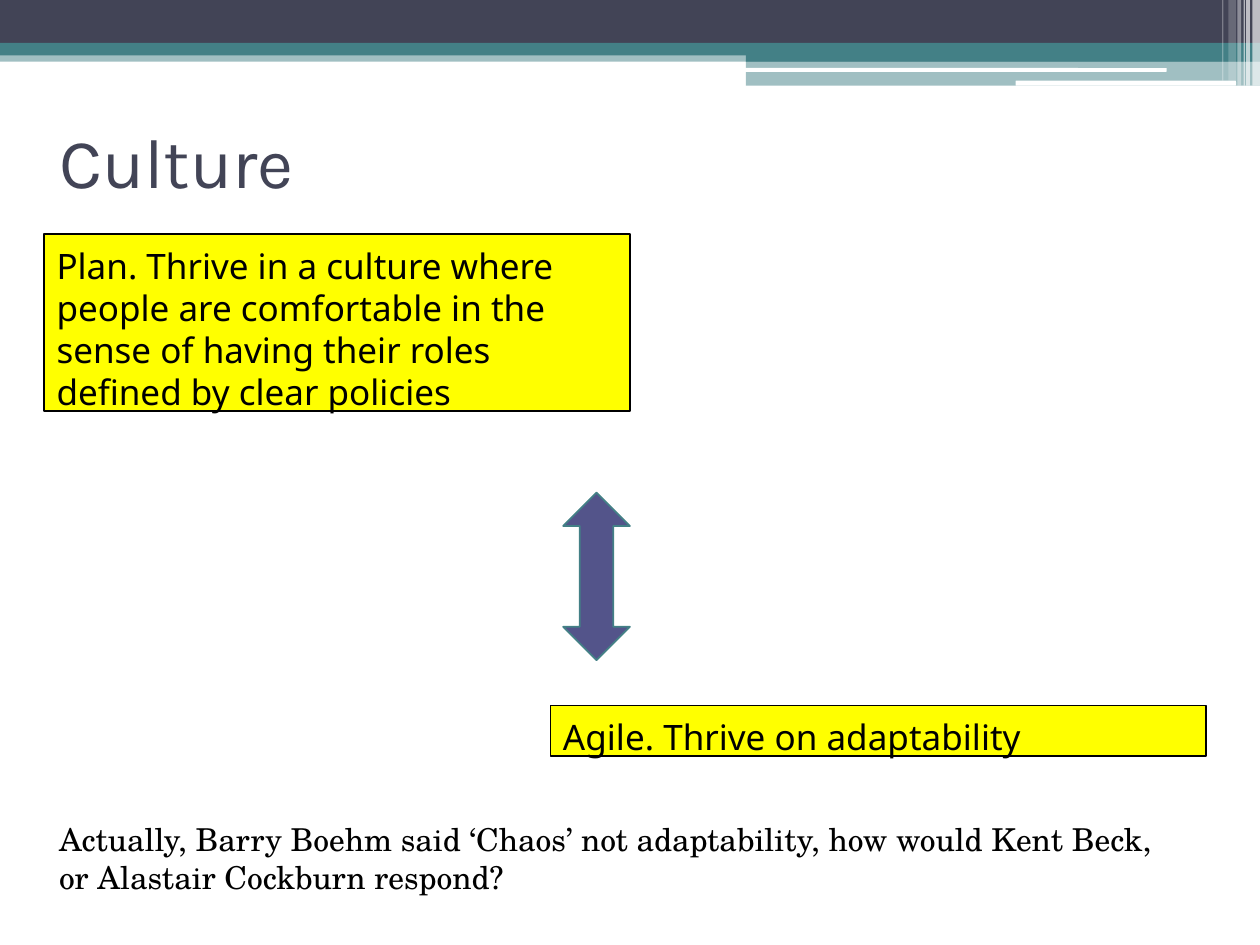
import dataclasses
import typing

import pptx
import pptx.dml.color
import pptx.enum.shapes
import pptx.enum.text
import pptx.oxml.ns
import pptx.util
from lxml import etree

Inches = pptx.util.Inches
Pt = pptx.util.Pt
MSO_SHAPE = pptx.enum.shapes.MSO_SHAPE
ANCHOR = pptx.enum.text.MSO_ANCHOR
ALIGN = pptx.enum.text.PP_ALIGN
Box = tuple[float, float, float, float]


@dataclasses.dataclass(frozen=True)
class Theme:
    navy: str = "424456"
    teal: str = "438086"
    indigo: str = "53548A"
    yellow: str = "FFFF00"
    white: str = "FFFFFF"
    black: str = "000000"
    title_font: str = "Karla"
    card_font: str = "Noto Sans"
    note_font: str = "TeX Gyre Schola"
    title_size: int = 40
    card_size: int = 20
    card_leading: int = 24
    note_size: int = 18


THEME = Theme()


@dataclasses.dataclass(frozen=True)
class Band:
    box: Box
    color: str
    opacity: int = 100
    kind: typing.Any = MSO_SHAPE.RECTANGLE


@dataclasses.dataclass(frozen=True)
class Card:
    box: Box
    text: str


BANDS = [
    Band((0, 0.4, 10, 0.09), THEME.teal, 50),
    Band((0, 0, 10, 0.34), THEME.navy),
    Band((0, 0.34, 10, 0.1), THEME.teal),
    Band((5.92, 0.39, 4.08, 0.1), THEME.teal),
    Band((5.92, 0.48, 4.08, 0.2), THEME.teal, 50),
    Band((5.91, 0.54, 3.35, 0.03), THEME.white, kind=MSO_SHAPE.ROUNDED_RECTANGLE),
    Band((8.06, 0.64, 1.75, 0.04), THEME.white, kind=MSO_SHAPE.ROUNDED_RECTANGLE),
]

# White corner stripes: left, width, height, opacity
STRIPES = [
    (9.94, 0.06, 0.68, 65),
    (9.89, 0.03, 0.68, 65),
    (9.87, 0.01, 0.68, 60),
    (9.82, 0.03, 0.68, 40),
    (9.75, 0.06, 0.64, 20),
    (9.7, 0.01, 0.64, 30),
]

CARDS = [
    Card((0.35, 1.86, 4.65, 1.4),
         "Plan. Thrive in a culture where people are comfortable in the sense "
         "of having their roles defined by clear policies"),
    Card((4.37, 5.6, 5.2, 0.4), "Agile. Thrive on adaptability"),
]

NOTE = ("Actually, Barry Boehm said ‘Chaos’ not adaptability, how would "
        "Kent Beck, or Alastair Cockburn respond?")


def rgb(color: str) -> pptx.dml.color.RGBColor:
    return pptx.dml.color.RGBColor.from_string(color)


def add_filled(s, kind, box: Box, fill: str, line: str | None = None):
    sp = s.shapes.add_shape(kind, *map(Inches, box))
    sp.shadow.inherit = False
    sp.fill.solid()
    sp.fill.fore_color.rgb = rgb(fill)
    if line:
        sp.line.color.rgb = rgb(line)
        sp.line.width = Pt(1)
    else:
        sp.line.fill.background()
    return sp


def add_band(s, band: Band) -> None:
    sp = add_filled(s, band.kind, band.box, band.color)
    if band.opacity < 100:
        clr = sp.fill._xPr.find(".//" + pptx.oxml.ns.qn("a:srgbClr"))
        alpha = etree.SubElement(clr, pptx.oxml.ns.qn("a:alpha"))
        alpha.set("val", str(band.opacity * 1000))


def write(tf, text: str, font: str, size: int, color: str, anchor=ANCHOR.TOP):
    tf.word_wrap = True
    tf.vertical_anchor = anchor
    p = tf.paragraphs[0]
    p.alignment = ALIGN.LEFT
    r = p.add_run()
    r.text = text
    r.font.name = font
    r.font.size = Pt(size)
    r.font.color.rgb = rgb(color)
    return p


def add_card(s, card: Card) -> None:
    sp = add_filled(s, MSO_SHAPE.RECTANGLE, card.box, THEME.yellow, THEME.black)
    tf = sp.text_frame
    tf.margin_left = tf.margin_right = Inches(0.1)
    tf.margin_top, tf.margin_bottom = Inches(0.08), 0
    p = write(tf, card.text, THEME.card_font, THEME.card_size, THEME.black)
    p.line_spacing = Pt(THEME.card_leading)


def add_title(s, box: Box, text: str) -> None:
    sp = s.shapes.title
    sp.left, sp.top, sp.width, sp.height = map(Inches, box)
    write(sp.text_frame, text, THEME.title_font, THEME.title_size, THEME.navy,
          ANCHOR.MIDDLE)


def add_note(s, box: Box, text: str) -> None:
    sp = s.shapes.add_textbox(*map(Inches, box))
    write(sp.text_frame, text, THEME.note_font, THEME.note_size, THEME.black)


def main() -> None:
    prs = pptx.Presentation()
    prs.slide_width, prs.slide_height = Inches(10), Inches(7.5)
    s = prs.slides.add_slide(prs.slide_layouts.get_by_name("Title Only"))
    for band in BANDS:
        add_band(s, band)
    for left, width, height, opacity in STRIPES:
        add_band(s, Band((left, 0, width, height), THEME.white, opacity))
    add_title(s, (0.37, 0.69, 9, 1.17), "Culture")
    for card in CARDS:
        add_card(s, card)
    arrow = add_filled(s, MSO_SHAPE.UP_DOWN_ARROW, (4.47, 3.91, 0.53, 1.33),
                       THEME.indigo, THEME.teal)
    arrow.adjustments[0] = arrow.adjustments[1] = 0.5
    add_note(s, (0.37, 6.46, 9.01, 0.71), NOTE)
    prs.save("out.pptx")


if __name__ == "__main__":
    main()
